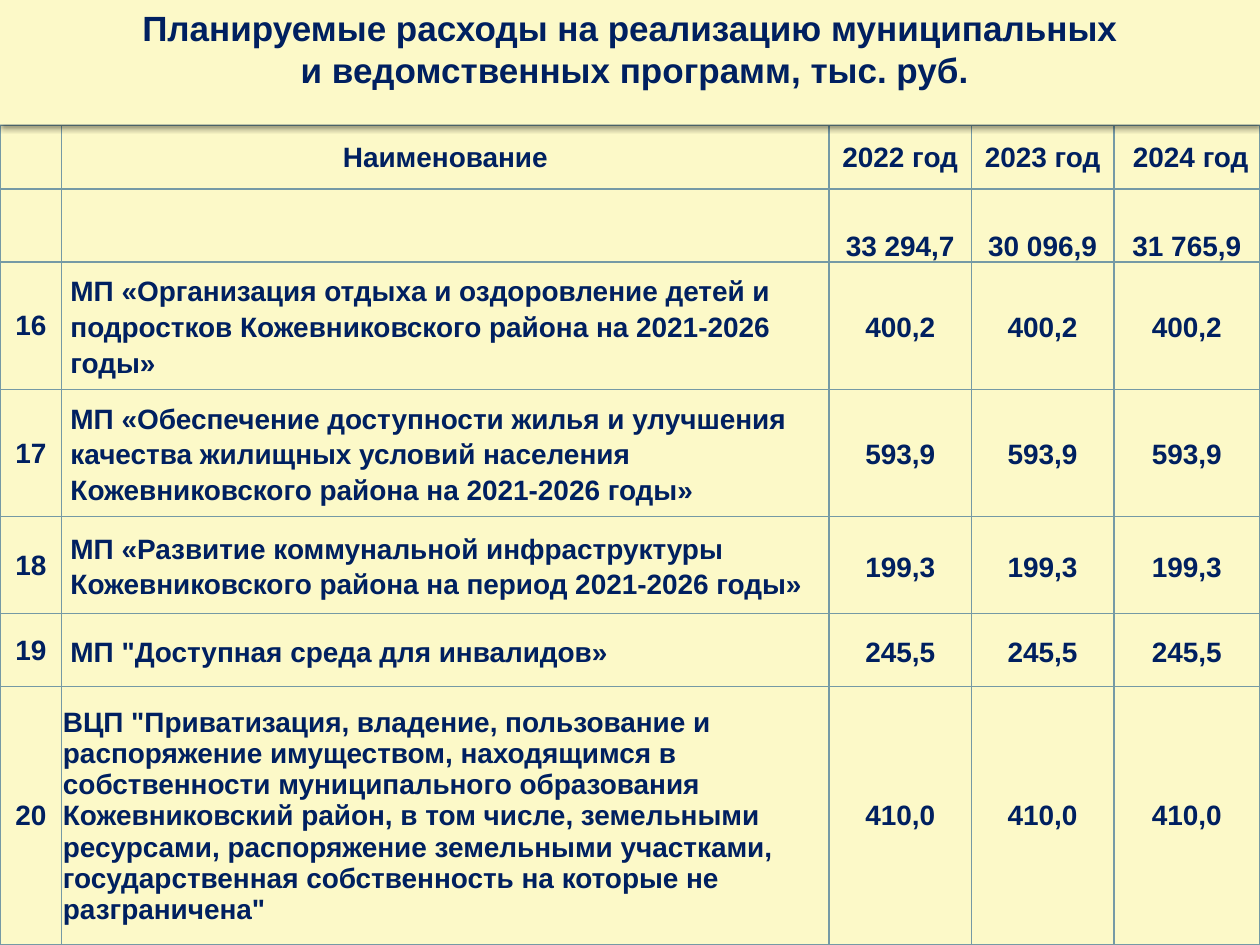
from pptx import Presentation
from pptx.dml.color import RGBColor
from pptx.enum.text import MSO_ANCHOR as Anchor, PP_ALIGN as Align
from pptx.oxml import parse_xml
from pptx.oxml.ns import nsdecls
from pptx.util import Inches, Pt

CREAM, NAVY, STEEL = "FCF9C8", "002060", "759AA5"
TITLE = ("Планируемые расходы на реализацию муниципальных\n"
         " и ведомственных программ, тыс. руб.")
HEADER = ("", "Наименование", "2022 год", "2023 год", " 2024 год")
TOTALS = ("", "", "33 294,7", "30 096,9", "31 765,9")
# Number, programme, yearly amount (the same in all three years)
PROGRAMMES = [
    ("16", "МП «Организация отдыха и оздоровление детей и подростков "
           "Кожевниковского района на 2021-2026 годы»", "400,2"),
    ("17", "МП «Обеспечение доступности жилья и улучшения качества жилищных "
           "условий населения Кожевниковского района на 2021-2026 годы»", "593,9"),
    ("18", "МП «Развитие коммунальной инфраструктуры Кожевниковского района "
           "на период 2021-2026 годы»", "199,3"),
    ("19", 'МП "Доступная среда для инвалидов»', "245,5"),
    ("20", 'ВЦП "Приватизация, владение, пользование и распоряжение имуществом, '
           "находящимся в собственности муниципального образования "
           "Кожевниковский район, в том числе, земельными ресурсами, "
           "распоряжение земельными участками, государственная собственность "
           'на которые не разграничена"', "410,0"),
]
COLUMN_WIDTHS = (0.49, 6.09, 1.13, 1.13, 1.16)
ROW_HEIGHTS = (0.51, 0.58, 1.01, 1.01, 0.77, 0.58, 2.05)
TITLE_HEIGHT = 0.99
TOTALS_ROW, SPACED_ROWS, NAME_COLUMN = 1, range(2, 6), 1


def rgb(value):
    return RGBColor.from_string(value)


def paint(target, color):
    target.fill.solid()
    target.fill.fore_color.rgb = rgb(color)


def format_text(frame, size, align):
    for para in frame.paragraphs:
        para.alignment = align
        for span in para.runs:
            span.font.name, span.font.size, span.font.bold = "Arial", Pt(size), True
            span.font.color.rgb = rgb(NAVY)


def add_borders(cell, color):
    properties = cell._tc.get_or_add_tcPr()
    for position, side in enumerate(("lnL", "lnR", "lnT", "lnB")):
        properties.insert(position, parse_xml(
            f'<a:{side} {nsdecls("a")} w="{Pt(1)}"><a:solidFill>'
            f'<a:srgbClr val="{color}"/></a:solidFill></a:{side}>'))


def fill_cell(cell, text, row, column):
    paint(cell, CREAM)
    add_borders(cell, STEEL)
    if not text:
        return
    spaced = row in SPACED_ROWS and column >= NAME_COLUMN
    side, top = (0.07, 0) if spaced else (0.01, 0.01)
    cell.margin_left = cell.margin_right = Inches(side)
    cell.margin_top, cell.margin_bottom = Inches(top), 0
    cell.vertical_anchor = Anchor.BOTTOM if row == TOTALS_ROW else Anchor.MIDDLE
    cell.text_frame.text = text
    is_name = column == NAME_COLUMN and row > TOTALS_ROW
    format_text(cell.text_frame, 16, Align.LEFT if is_name else Align.CENTER)
    if spaced:
        cell.text_frame.paragraphs[0].line_spacing = 1.15


def add_programme_table(page):
    rows = [HEADER, TOTALS] + [(number, name) + (amount,) * 3
                               for number, name, amount in PROGRAMMES]
    frame = page.shapes.add_table(
        len(rows), len(HEADER), 0, Inches(TITLE_HEIGHT),
        Inches(sum(COLUMN_WIDTHS)), Inches(sum(ROW_HEIGHTS)))
    table = frame.table
    table.first_row = table.horz_banding = False
    for column, width in zip(table.columns, COLUMN_WIDTHS):
        column.width = Inches(width)
    for row, height in zip(table.rows, ROW_HEIGHTS):
        row.height = Inches(height)
    for row, texts in enumerate(rows):
        for column, text in enumerate(texts):
            fill_cell(table.cell(row, column), text, row, column)
    return frame


def format_title(title, width):
    title.left = title.top = 0
    title.width, title.height = width, Inches(TITLE_HEIGHT)
    paint(title, CREAM)
    title.element.spPr.append(parse_xml(
        f'<a:effectLst {nsdecls("a")}><a:outerShdw blurRad="{Pt(3.1)}" '
        f'dist="{Pt(2)}" dir="5400000" rotWithShape="0"><a:srgbClr val="000000">'
        '<a:alpha val="38000"/></a:srgbClr></a:outerShdw></a:effectLst>'))
    frame = title.text_frame
    frame.text = TITLE
    frame.word_wrap = True
    frame.vertical_anchor = Anchor.TOP
    format_text(frame, 20, Align.CENTER)


def main():
    deck = Presentation()
    deck.slide_width, deck.slide_height = Inches(10), Inches(7.5)
    page = deck.slides.add_slide(deck.slide_layouts[5])
    title = page.shapes.title
    format_title(title, deck.slide_width)
    table_frame = add_programme_table(page)
    table_frame.element.addnext(title.element)  # the title's shadow falls on the table
    deck.save("out.pptx")


if __name__ == "__main__":
    main()
